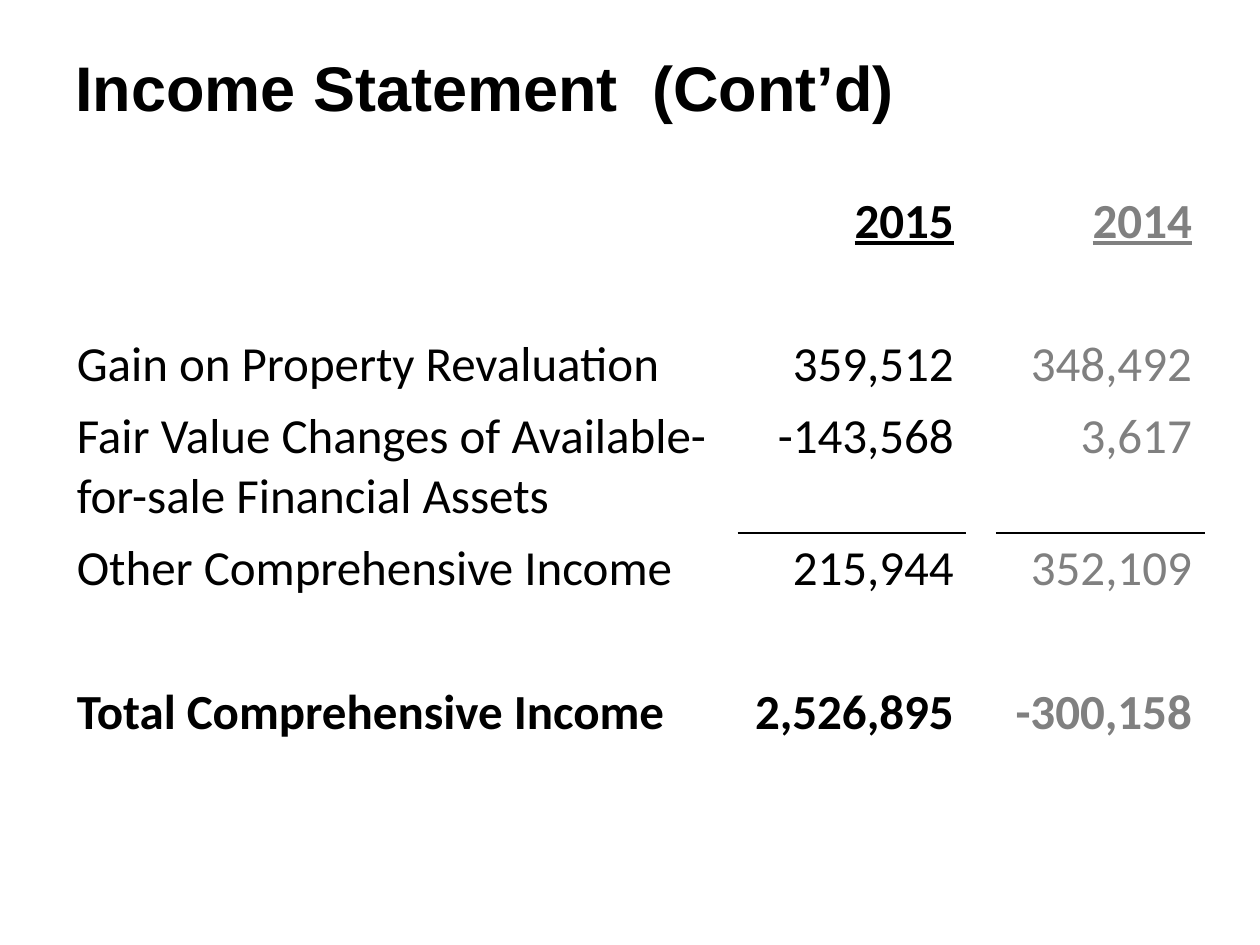
from lxml.etree import SubElement
from pptx import Presentation
from pptx.dml.color import RGBColor
from pptx.enum.text import MSO_ANCHOR, PP_ALIGN
from pptx.oxml.ns import qn
from pptx.util import Inches, Pt

BLACK = RGBColor(0x00, 0x00, 0x00)
GREY = RGBColor(0x80, 0x80, 0x80)

# Content: label, 2015, spacer, 2014, and the format of the row
TITLE = "Income Statement  (Cont’d)"
BOLD = {"bold": True}
STATEMENT = [
    (("", "2015", "", "2014"), {"bold": True, "underline": True}),
    (("", "", "", ""), {}),
    (("Gain on Property Revaluation", "359,512", "", "348,492"), {}),
    (("Fair Value Changes of Available-for-sale Financial Assets",
      "-143,568", "", "3,617"), {}),
    (("Other Comprehensive Income", "215,944", "", "352,109"), {}),
    (("", "", "", ""), {}),
    (("Total Comprehensive Income", "2,526,895", "", "-300,158"), BOLD),
    (("", "", "", ""), {}),
]
COLUMN_WIDTHS = [5.35, 1.81, 0.24, 1.65]
COLUMN_COLORS = [BLACK, BLACK, BLACK, GREY]
AMOUNT_COLUMNS = (1, 3)
SUBTOTAL_ROW = 4
LINE_HEIGHT = 0.57
ROW_HEIGHTS = {3: 1.05, 7: 0.4}  # wrapped label, closing row


def write(frame, text, size=28, font="Calibri", color=BLACK, bold=False,
          underline=False, align=PP_ALIGN.LEFT):
    paragraph = frame.paragraphs[0]
    paragraph.alignment = align
    run = paragraph.add_run()
    run.text = text
    run.font.size = Pt(size)
    run.font.name = font
    run.font.color.rgb = color
    run.font.bold = bold
    run.font.underline = underline


def rule(cell, side):
    """Draw a 1 pt black border on one side of a cell."""
    properties = cell._tc.get_or_add_tcPr()
    line = SubElement(properties, qn(f"a:ln{side}"), w=str(Pt(1)))
    fill = SubElement(line, qn("a:solidFill"))
    SubElement(fill, qn("a:srgbClr"), val=str(BLACK))
    properties.insert(0, line)


presentation = Presentation()
presentation.slide_width = Inches(10)
presentation.slide_height = Inches(7.5)
slide = presentation.slides.add_slide(presentation.slide_layouts[6])

# Title
title = slide.shapes.add_textbox(Inches(0.5), Inches(0.29),
                                 Inches(9.5), Inches(0.79)).text_frame
title.word_wrap = True
title.vertical_anchor = MSO_ANCHOR.MIDDLE
write(title, TITLE, size=36, font="Arial", bold=True)

# Statement table
heights = [ROW_HEIGHTS.get(r, LINE_HEIGHT) for r in range(len(STATEMENT))]
statement = slide.shapes.add_table(
    len(STATEMENT), len(COLUMN_WIDTHS), Inches(0.51), Inches(1.47),
    Inches(sum(COLUMN_WIDTHS)), Inches(sum(heights))).table
statement.first_row = False
statement.horz_banding = False
for column, width in zip(statement.columns, COLUMN_WIDTHS):
    column.width = Inches(width)
for row, height in zip(statement.rows, heights):
    row.height = Inches(height)

for r, (entries, row_format) in enumerate(STATEMENT):
    for c, entry in enumerate(entries):
        cell = statement.cell(r, c)
        cell.fill.background()
        if entry:
            align = PP_ALIGN.RIGHT if c in AMOUNT_COLUMNS else PP_ALIGN.LEFT
            write(cell.text_frame, entry, color=COLUMN_COLORS[c],
                  align=align, **row_format)

# Rules above the subtotal
for c in AMOUNT_COLUMNS:
    rule(statement.cell(SUBTOTAL_ROW - 1, c), "B")
    rule(statement.cell(SUBTOTAL_ROW, c), "T")

presentation.save("out.pptx")
